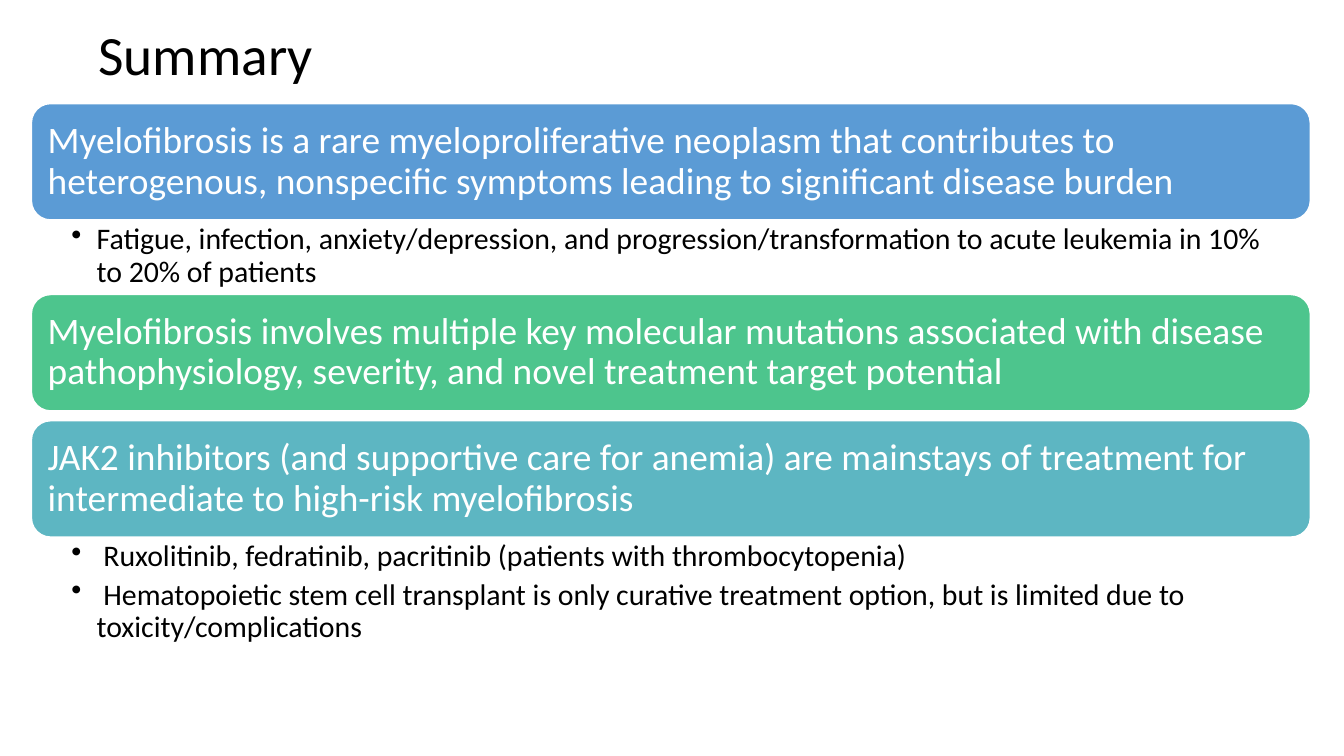
"""Build the myelofibrosis summary slide: coloured statements with bulleted details."""
from lxml import etree
from pptx import Presentation
from pptx.dml.color import RGBColor
from pptx.enum import shapes, text
from pptx.oxml.ns import qn
from pptx.util import Pt


def color(value):
    """Turn a hex string into a colour."""
    return RGBColor.from_string(value)


def write(tf, lines, size, hex_color, margins, anchor, bullet=False):
    """Fill a text frame with evenly formatted paragraphs."""
    left, top, right, bottom = margins
    frame = {"word_wrap": True, "auto_size": text.MSO_AUTO_SIZE.NONE, "vertical_anchor": anchor,
             "margin_left": Pt(left), "margin_top": Pt(top),
             "margin_right": Pt(right), "margin_bottom": Pt(bottom)}
    for name, value in frame.items():
        setattr(tf, name, value)
    for i, line in enumerate(lines):
        p = tf.paragraphs[0] if i == 0 else tf.add_paragraph()
        p.alignment, p.line_spacing, p.space_before = text.PP_ALIGN.LEFT, 0.9, Pt(0)
        if bullet:
            p.level, p.space_after = 1, Pt(3.2)
            pPr = p._p.get_or_add_pPr()
            pPr.set("marL", str(Pt(13.5)))
            pPr.set("indent", str(-Pt(13.5)))
            etree.SubElement(pPr, qn("a:buChar")).set("char", "•")
        r = p.add_run()
        r.text = line
        for name, value in {"name": "Calibri", "size": Pt(size)}.items():
            setattr(r.font, name, value)
        r.font.color.rgb = color(hex_color)


prs = Presentation()
prs.slide_width, prs.slide_height = Pt(720), Pt(405)
s = prs.slides.add_slide(prs.slide_layouts[5])

title = s.shapes.title
box = {"left": 45.4, "top": 9.4, "width": 620.6, "height": 42.5}
for name, value in box.items():
    setattr(title, name, Pt(value))
write(title.text_frame, ["Summary"], 29.7, "000000", (7.2, 3.6, 7.2, 3.6), text.MSO_ANCHOR.MIDDLE)

left, width, bar_height, gap = 16.7, 685.4, 62.6, 5
sections = [
    ("Myelofibrosis is a rare myeloproliferative neoplasm that contributes to heterogenous, "
     "nonspecific symptoms leading to significant disease burden", "5B9BD5", 100,
     ["Fatigue, infection, anxiety/depression, and progression/transformation to acute leukemia "
      "in 10% to 20% of patients"], 39.7),
    ("Myelofibrosis involves multiple key molecular mutations associated with disease "
     "pathophysiology, severity, and novel treatment target potential", "4DC58D", 100, [], gap),
    ("JAK2 inhibitors (and supportive care for anemia) are mainstays of treatment for "
     "intermediate to high-risk myelofibrosis", "4CAFBC", 90,
     [" Ruxolitinib, fedratinib, pacritinib (patients with thrombocytopenia)",
      " Hematopoietic stem cell transplant is only curative treatment option, but is limited "
      "due to toxicity/complications"], 61.9),
]

y = 55.4
for statement, fill, opacity, details, space in sections:
    sp = s.shapes.add_shape(shapes.MSO_SHAPE.ROUNDED_RECTANGLE,
                            Pt(left), Pt(y), Pt(width), Pt(bar_height))
    sp.shadow.inherit = False
    sp.fill.solid()
    sp.fill.fore_color.rgb = color(fill)
    if opacity < 100:
        clr = sp._element.spPr.find(qn("a:solidFill")).find(qn("a:srgbClr"))
        etree.SubElement(clr, qn("a:alpha")).set("val", str(opacity * 1000))
    sp.line.color.rgb = color("FFFFFF")
    sp.line.width = Pt(1)
    write(sp.text_frame, [statement], 20, "FFFFFF", (5.8,) * 4, text.MSO_ANCHOR.MIDDLE)
    y += bar_height
    if details:
        tb = s.shapes.add_textbox(Pt(left), Pt(y), Pt(width), Pt(space))
        write(tb.text_frame, details, 16, "000000", (21.6, 2, 11.5, 2), text.MSO_ANCHOR.TOP, True)
    y += space

prs.save("out.pptx")
